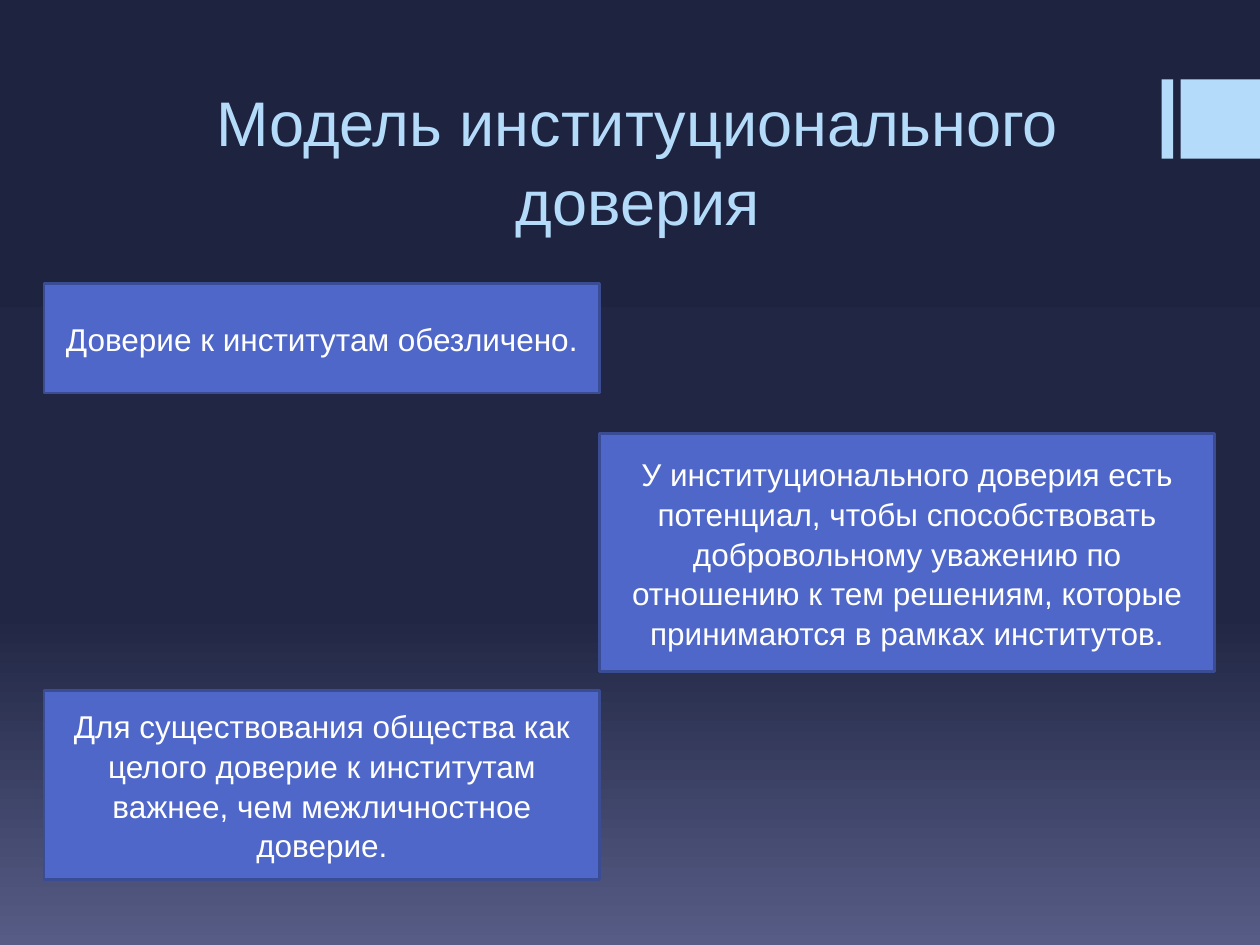
from copy import deepcopy
from typing import NamedTuple

from pptx import Presentation
from pptx.dml.color import RGBColor
from pptx.enum.shapes import MSO_SHAPE as Kind
from pptx.enum.text import MSO_ANCHOR as Anchor, PP_ALIGN as Align
from pptx.oxml.ns import qn
from pptx.shapes.autoshape import Shape
from pptx.slide import Slide
from pptx.text.text import TextFrame
from pptx.util import Inches, Pt

SKY = RGBColor(0xB4, 0xDC, 0xFA)
BLUE = RGBColor(0x4E, 0x67, 0xC8)
EDGE = RGBColor(0x3A, 0x4C, 0x94)
WHITE = RGBColor(0xFF, 0xFF, 0xFF)
STOPS = [
    (0, RGBColor(0x1E, 0x23, 0x3F)),
    (0.65, RGBColor(0x20, 0x26, 0x43)),
    (1, RGBColor(0x57, 0x5C, 0x86)),
]
FONT = "Arial"


class Box(NamedTuple):
    left: float
    top: float
    width: float
    height: float


class Card(NamedTuple):
    box: Box
    text: str


EDGE_X, MID_X, WIDE = 0.35, 4.76, 4.88
SLIM = MID_X - EDGE_X
TITLE = Box(1.06, 0.68, 8, 1.26)
BARS = [Box(9.22, 0.63, 0.09, 0.63), Box(9.37, 0.63, 0.63, 0.63)]
CARDS = [
    Card(Box(EDGE_X, 2.25, SLIM, 0.87), "Доверие к институтам обезличено."),
    Card(
        Box(MID_X, 3.44, WIDE, 1.89),
        "У институционального доверия есть потенциал, чтобы способствовать "
        "добровольному уважению по отношению к тем решениям, которые "
        "принимаются в рамках институтов.",
    ),
    Card(
        Box(EDGE_X, 5.48, SLIM, 1.5),
        "Для существования общества как целого доверие к институтам "
        "важнее, чем межличностное доверие.",
    ),
]


def paint_back(slide: Slide) -> None:
    fill = slide.background.fill
    fill.gradient()
    fill.gradient_angle = 270
    stops = slide.element.find(".//" + qn("a:gsLst"))
    stops.append(deepcopy(stops[-1]))
    for stop, (place, color) in zip(fill.gradient_stops, STOPS):
        stop.position = place
        stop.color.rgb = color


def add_rect(slide: Slide, box: Box, fill: RGBColor) -> Shape:
    rect = slide.shapes.add_shape(Kind.RECTANGLE, *map(Inches, box))
    rect.shadow.inherit = False
    rect.fill.solid()
    rect.fill.fore_color.rgb = fill
    rect.line.fill.background()
    return rect


def write(frame: TextFrame, text: str, size: int, color: RGBColor,
          anchor: Anchor, space: float) -> None:
    frame.word_wrap = True
    frame.vertical_anchor = anchor
    para = frame.paragraphs[0]
    para.alignment = Align.CENTER
    para.line_spacing = space
    run = para.add_run()
    run.text = text
    run.font.name = FONT
    run.font.size = Pt(size)
    run.font.color.rgb = color


def add_title(slide: Slide, box: Box, text: str) -> None:
    title = slide.shapes.title
    title.left, title.top, title.width, title.height = map(Inches, box)
    write(title.text_frame, text, 36, SKY, Anchor.BOTTOM, 1.04)


def add_card(slide: Slide, card: Card) -> None:
    rect = add_rect(slide, card.box, BLUE)
    rect.line.color.rgb = EDGE
    rect.line.width = Pt(1.5)
    write(rect.text_frame, card.text, 18, WHITE, Anchor.MIDDLE, 1.05)


def main() -> None:
    deck = Presentation()
    deck.slide_width, deck.slide_height = Inches(10), Inches(7.5)
    slide = deck.slides.add_slide(deck.slide_layouts[5])
    paint_back(slide)
    for bar in BARS:
        add_rect(slide, bar, SKY)
    add_title(slide, TITLE, "Модель институционального доверия")
    for card in CARDS:
        add_card(slide, card)
    deck.save("out.pptx")


if __name__ == "__main__":
    main()
